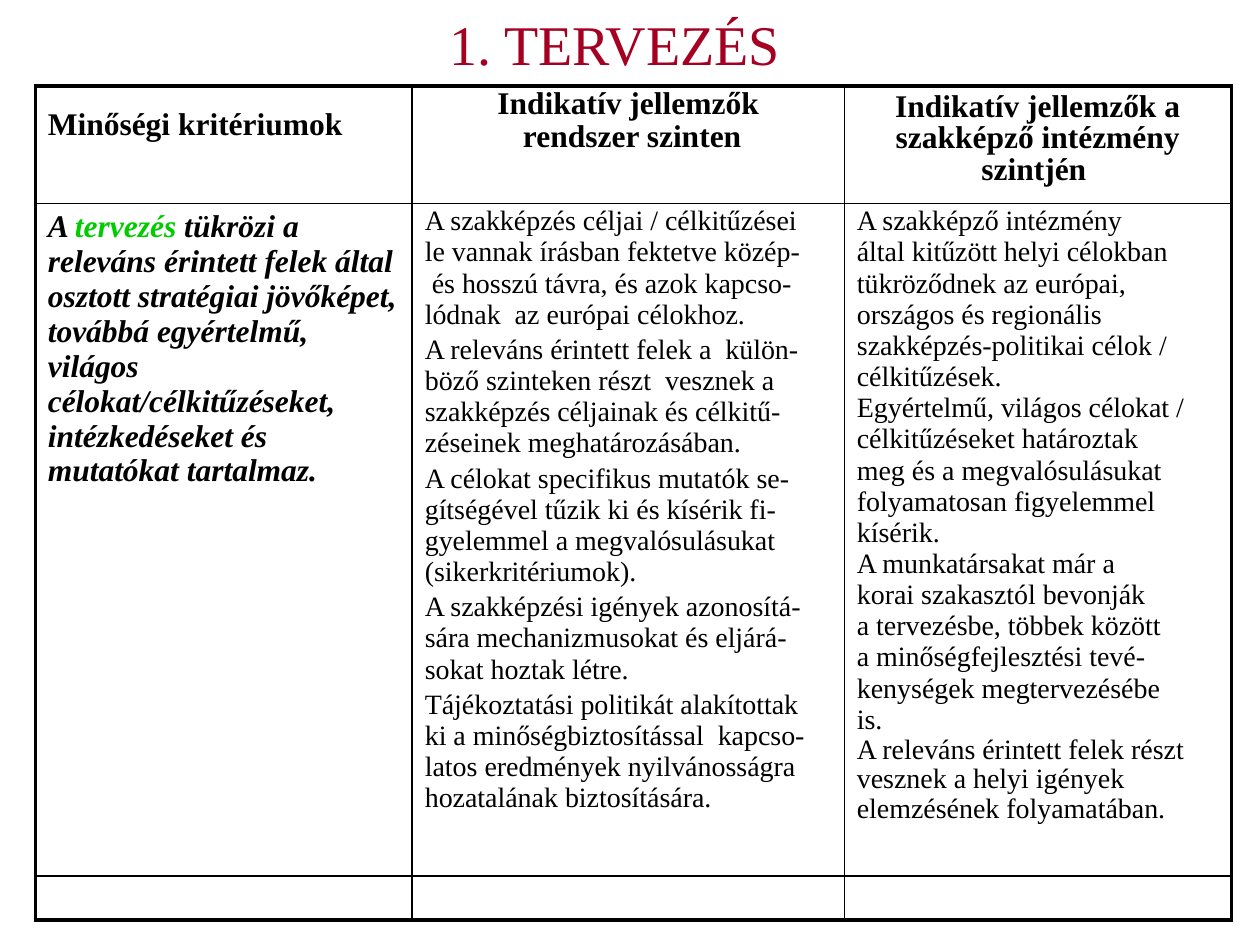
from dataclasses import dataclass

from lxml import etree
from pptx import Presentation
from pptx.dml.color import RGBColor
from pptx.enum.text import MSO_ANCHOR, PP_ALIGN
from pptx.oxml.ns import qn
from pptx.util import Cm, Pt

LEFT, CENTER, JUSTIFY = PP_ALIGN.LEFT, PP_ALIGN.CENTER, PP_ALIGN.JUSTIFY
MIDDLE = MSO_ANCHOR.MIDDLE


@dataclass(frozen=True)
class Theme:
    font: str = "Times New Roman"
    title_color: RGBColor = RGBColor(0xA5, 0x00, 0x21)
    text_color: RGBColor = RGBColor(0x00, 0x00, 0x00)
    accent: RGBColor = RGBColor(0x00, 0xCC, 0x00)
    title_size: Pt = Pt(32)
    heading_size: Pt = Pt(18)
    body_size: Pt = Pt(16)
    outer_line: Pt = Pt(2.25)
    inner_line: Pt = Pt(1)


theme = Theme()


def format_paragraph(paragraph, size, color, alignment=LEFT, spacing=1.0, before=0, bold=False):
    paragraph.alignment = alignment
    paragraph.line_spacing = spacing
    paragraph.space_before = Pt(before)
    font = paragraph.font
    font.name = theme.font
    font.size = size
    font.bold = bold
    font.color.rgb = color


def set_border(cell, side, width):
    properties = cell._tc.get_or_add_tcPr()
    line = etree.SubElement(properties, qn(f"a:{side}"), w=str(int(width)))
    fill = etree.SubElement(line, qn("a:solidFill"))
    etree.SubElement(fill, qn("a:srgbClr"), val=str(theme.text_color))


system_groups = [
    ["A szakképzés céljai / célkitűzései ", "le vannak írásban fektetve közép-",
     " és hosszú távra, és azok kapcso-", "lódnak  az európai célokhoz."],
    ["A releváns érintett felek a  külön-", "böző szinteken részt  vesznek a",
     "szakképzés céljainak és célkitű-", "zéseinek meghatározásában."],
    ["A célokat specifikus mutatók se-", "gítségével tűzik ki és kísérik fi-",
     "gyelemmel a megvalósulásukat ", "(sikerkritériumok). "],
    ["A szakképzési igények azonosítá-", "sára mechanizmusokat és eljárá-",
     "sokat hoztak létre."],
    ["Tájékoztatási politikát alakítottak", "ki a minőségbiztosítással  kapcso-",
     "latos eredmények nyilvánosságra", "hozatalának biztosítására. "],
]
institution_groups = [
    ["A szakképző intézmény", "által kitűzött helyi célokban", "tükröződnek az európai,",
     "országos és regionális", "szakképzés-politikai célok /", "célkitűzések."],
    ["Egyértelmű, világos célokat /", "célkitűzéseket határoztak",
     "meg és a megvalósulásukat", "folyamatosan figyelemmel", "kísérik."],
    ["A munkatársakat már a", "korai szakasztól bevonják", "a tervezésbe, többek között",
     "a minőségfejlesztési tevé-", "kenységek megtervezésébe", "is."],
    ["A releváns érintett felek részt", "vesznek a helyi igények",
     "elemzésének folyamatában."],
]
headings = [
    (["Minőségi kritériumok"], LEFT, 1.0),
    (["Indikatív jellemzők", " rendszer szinten"], CENTER, 0.8),
    (["Indikatív jellemzők a szakképző intézmény szintjén "], CENTER, 0.9),
]
criterion_runs = [
    ("A ", theme.text_color),
    ("tervezés", theme.accent),
    (" tükrözi a releváns érintett felek által osztott stratégiai jövőképet, "
     "továbbá egyértelmű, világos célokat/célkitűzéseket, intézkedéseket és "
     "mutatókat tartalmaz.", theme.text_color),
]

presentation = Presentation()
presentation.slide_width = Cm(25.4)
presentation.slide_height = Cm(19.05)
slide = presentation.slides.add_slide(presentation.slide_layouts[5])

title = slide.shapes.title
title.left, title.top, title.width, title.height = Cm(2.49), Cm(0), Cm(19.81), Cm(1.75)
title.text_frame.text = "1. TERVEZÉS"
title.text_frame.vertical_anchor = MIDDLE
format_paragraph(title.text_frame.paragraphs[0], theme.title_size, theme.title_color, CENTER)

column_widths = [Cm(7.6), Cm(8.71), Cm(7.8)]
row_heights = [Cm(2.37), Cm(13.56), Cm(0.89)]
table = slide.shapes.add_table(
    len(row_heights), len(column_widths), Cm(0.71), Cm(1.73), sum(column_widths), sum(row_heights)
).table
table.first_row = False
table.horz_banding = False
for column, width in zip(table.columns, column_widths):
    column.width = width
for row, height in zip(table.rows, row_heights):
    row.height = height

last_row, last_column = len(row_heights) - 1, len(column_widths) - 1
for row_index, row in enumerate(table.rows):
    for column_index, cell in enumerate(row.cells):
        sides = {
            "lnL": column_index == 0,
            "lnR": column_index == last_column,
            "lnT": row_index == 0,
            "lnB": row_index == last_row,
        }
        for side, is_outer in sides.items():
            set_border(cell, side, theme.outer_line if is_outer else theme.inner_line)
        cell.fill.background()

for cell in table.rows[last_row].cells:
    cell.margin_top = cell.margin_bottom = Cm(0)

for column_index, (lines, alignment, spacing) in enumerate(headings):
    cell = table.cell(0, column_index)
    cell.text = "\n".join(lines)
    for paragraph in cell.text_frame.paragraphs:
        format_paragraph(paragraph, theme.heading_size, theme.text_color,
                         alignment, spacing, before=2.9, bold=True)
table.cell(0, 0).margin_top = Cm(0.44)

criterion = table.cell(1, 0).text_frame.paragraphs[0]
format_paragraph(criterion, theme.heading_size, theme.text_color, bold=True)
criterion.font.italic = True
for text, color in criterion_runs:
    run = criterion.add_run()
    run.text = text
    run.font.color.rgb = color

body_columns = [
    (1, system_groups, JUSTIFY, 5, 0.85),
    (2, institution_groups, LEFT, 2.7, 0.8),
]
for column_index, groups, alignment, group_gap, last_spacing in body_columns:
    cell = table.cell(1, column_index)
    cell.text = "\n".join(line for group in groups for line in group)
    paragraphs = iter(cell.text_frame.paragraphs)
    for group in groups:
        spacing = last_spacing if group is groups[-1] else 0.85
        for line_index, paragraph in zip(range(len(group)), paragraphs):
            before = group_gap if line_index == 0 else 2.7
            format_paragraph(paragraph, theme.body_size, theme.text_color,
                             alignment, spacing, before)

presentation.save("out.pptx")
